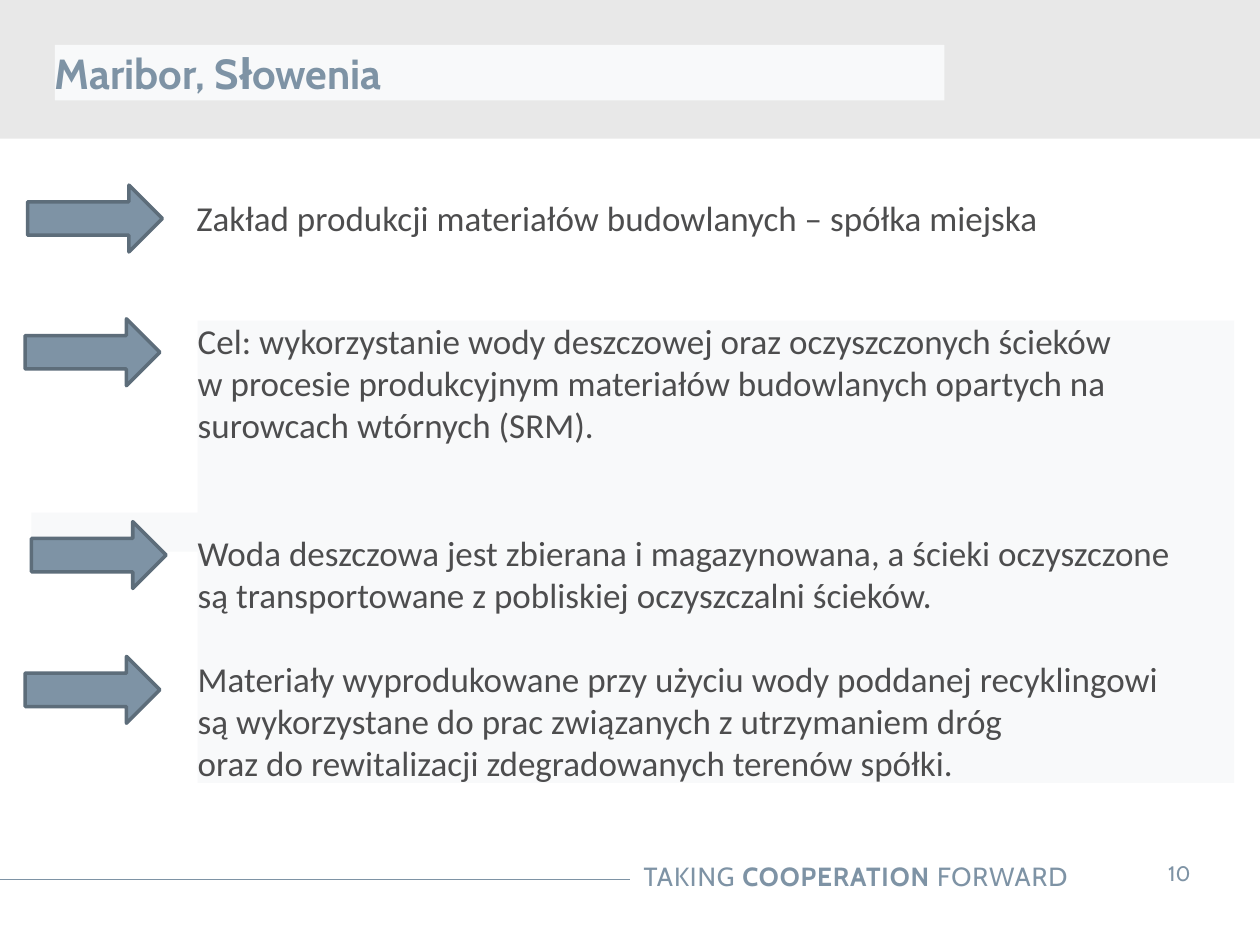
from lxml.etree import SubElement
from pptx import Presentation
from pptx.dml.color import RGBColor
from pptx.enum.shapes import MSO_CONNECTOR, MSO_SHAPE
from pptx.enum.text import MSO_ANCHOR, PP_ALIGN
from pptx.oxml.ns import qn
from pptx.util import Pt

BLUE, EDGE, INK, BAND, PALE = "7E93A5", "5D6D7A", "4D4D4E", "E8E8E8", "F8F9FA"
LINE = 24.4

TITLE = "Maribor, Słowenia"
LEAD = "Zakład produkcji materiałów budowlanych – spółka miejska"
POINTS = [
    ("Cel: wykorzystanie wody deszczowej oraz oczyszczonych ścieków\n"
     "w procesie produkcyjnym materiałów budowlanych opartych na surowcach wtórnych (SRM).", 0),
    ("Woda deszczowa jest zbierana i magazynowana, a ścieki oczyszczone\n"
     "są transportowane z pobliskiej oczyszczalni ścieków.", 2 * LINE),
    ("Materiały wyprodukowane przy użyciu wody poddanej recyklingowi\n"
     "są wykorzystane do prac związanych z utrzymaniem dróg\n"
     "oraz do rewitalizacji zdegradowanych terenów spółki.", LINE),
]
SLOGAN = [("TAKING ", False), ("COOPERATION", True), (" FORWARD", False)]
PAGE = "10"
ARROWS = [(15.8, 105.8), (14.4, 182.2), (18, 298.1), (14.4, 375.1)]
ARROW_SIZE = (77, 38.2)


def rgb(value):
    return RGBColor.from_string(value)


def add_shape(kind, box, fill, line=None):
    sp = s.shapes.add_shape(kind, *map(Pt, box))
    sp.shadow.inherit = False
    sp.fill.solid()
    sp.fill.fore_color.rgb = rgb(fill)
    if line:
        sp.line.color.rgb = rgb(line)
        sp.line.width = Pt(2)
    else:
        sp.line.fill.background()
    return sp


def add_textbox(box):
    return s.shapes.add_textbox(*map(Pt, box))


def write(sp, paragraphs, font="Calibri", size=20, color=INK, align=PP_ALIGN.LEFT,
          anchor=MSO_ANCHOR.TOP, insets=(7.2, 3.6), wrap=True, spacing=0):
    tf = sp.text_frame
    tf.word_wrap = wrap
    tf.vertical_anchor = anchor
    tf.margin_left = tf.margin_right = Pt(insets[0])
    tf.margin_top = tf.margin_bottom = Pt(insets[1])
    for i, (runs, before) in enumerate(paragraphs):
        p = tf.add_paragraph() if i else tf.paragraphs[0]
        p.alignment = align
        p.space_before = Pt(before)
        for text, bold in runs:
            for j, part in enumerate(text.split("\n")):
                if j:
                    p.add_line_break()
                r = p.add_run()
                r.text = part
                r.font.name, r.font.size, r.font.bold = font, Pt(size), bold
                r.font.color.rgb = rgb(color)
                if spacing:
                    r.font._element.set("spc", str(int(spacing * 100)))


prs = Presentation()
prs.slide_width, prs.slide_height = Pt(720), Pt(540)
s = prs.slides.add_slide(prs.slide_layouts[6])

rule = s.shapes.add_connector(MSO_CONNECTOR.STRAIGHT, Pt(0), Pt(502.6), Pt(360), Pt(502.6))
rule.line.color.rgb = rgb(BLUE)
rule.line.width = Pt(0.75)
SubElement(rule._element.spPr, qn("a:effectLst"))

add_shape(MSO_SHAPE.RECTANGLE, (0, 0, 720, 79.2), BAND)
write(add_textbox((279.4, 488.2, 337.7, 25.2)), [(SLOGAN, 0)],
      font="Cabin", size=15, color=BLUE, align=PP_ALIGN.RIGHT, spacing=0.5)
write(add_textbox((647.3, 484.6, 53.3, 28.8)), [([(PAGE, False)], 0)],
      font="Cabin", size=12, color=BLUE, align=PP_ALIGN.CENTER, insets=(14.4, 7.2), wrap=False)

add_shape(MSO_SHAPE.RECTANGLE, (18, 293, 664.6, 22.3), PALE)
title = add_shape(MSO_SHAPE.RECTANGLE, (31.4, 25.7, 508.3, 31.7), PALE)
write(title, [([(TITLE, True)], 0)], font="Cabin", size=24, color=BLUE,
      anchor=MSO_ANCHOR.MIDDLE, insets=(0, 0))
body = add_shape(MSO_SHAPE.RECTANGLE, (113, 183.2, 592.3, 264.2), PALE)
write(body, [([(text, False)], before) for text, before in POINTS],
      anchor=MSO_ANCHOR.MIDDLE, insets=(0, 0))

for position in ARROWS:
    add_shape(MSO_SHAPE.RIGHT_ARROW, position + ARROW_SIZE, BLUE, EDGE)
write(add_textbox((105.1, 108.7, 540.7, 31.7)), [([(LEAD, False)], 0)])

prs.save("out.pptx")
